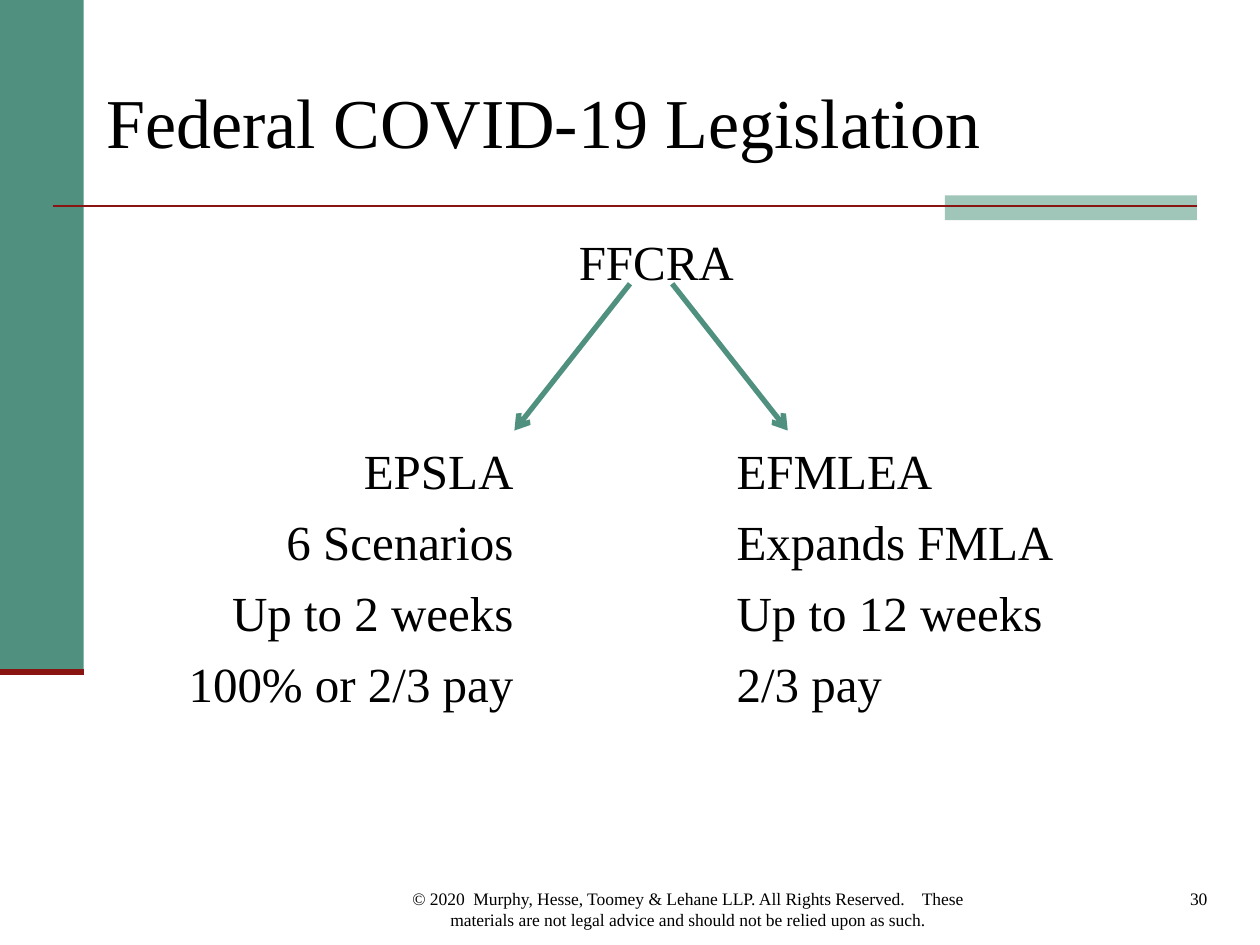
"""Build the Federal COVID-19 Legislation slide."""
from lxml.etree import SubElement
from pptx import Presentation
from pptx.dml.color import RGBColor
from pptx.enum.shapes import MSO_CONNECTOR, MSO_SHAPE
from pptx.enum.text import MSO_ANCHOR, PP_ALIGN
from pptx.oxml.ns import qn
from pptx.util import Cm, Pt

COLORS = {"green": "4F917E", "pale": "A0C6BA", "red": "891411", "text": "000000"}
FONT = "Times New Roman"


def add_text(slide, lines, box, size, align=PP_ALIGN.LEFT, anchor=MSO_ANCHOR.TOP,
             tabs=(), gaps=()):
    frame = slide.shapes.add_textbox(*map(Cm, box)).text_frame
    frame.word_wrap = True
    frame.vertical_anchor = anchor
    for index, line in enumerate(lines):
        paragraph = frame.add_paragraph() if index else frame.paragraphs[0]
        paragraph.alignment = PP_ALIGN.LEFT if "\t" in line else align
        if index:
            paragraph.space_before = Pt(gaps[index - 1])
        if "\t" in line:
            tab_list = SubElement(paragraph._p.get_or_add_pPr(), qn("a:tabLst"))
            for position, kind in tabs:
                SubElement(tab_list, qn("a:tab"), pos=str(Cm(position)), algn=kind)
        run = paragraph.add_run()
        run.text = line
        run.font.name = FONT
        run.font.size = Pt(size)
        run.font.color.rgb = RGBColor.from_string(COLORS["text"])


def add_line(slide, points, color, width, arrow=False):
    connector = slide.shapes.add_connector(MSO_CONNECTOR.STRAIGHT, *map(Cm, points))
    connector.line.color.rgb = RGBColor.from_string(COLORS[color])
    connector.line.width = Pt(width)
    if arrow:
        SubElement(connector.line._get_or_add_ln(), qn("a:tailEnd"), type="arrow")
    SubElement(connector._element.spPr, qn("a:effectLst"))


presentation = Presentation()
presentation.slide_width = Cm(25.4)
presentation.slide_height = Cm(19.05)
slide = presentation.slides.add_slide(presentation.slide_layouts[6])

for box, color in [((0, 0, 1.69, 13.55), "green"), ((19.05, 3.94, 5.08, 0.5), "pale")]:
    shape = slide.shapes.add_shape(MSO_SHAPE.RECTANGLE, *map(Cm, box))
    shape.shadow.inherit = False
    shape.fill.solid()
    shape.fill.fore_color.rgb = RGBColor.from_string(COLORS[color])
    shape.line.fill.background()

add_line(slide, (1.06, 4.15, 24.13, 4.15), "red", 1.5)
add_line(slide, (0, 13.55, 1.69, 13.55), "red", 3.5)

add_text(slide, ["Federal COVID-19 Legislation"], (1.9, 0.85, 22.86, 3.17), 40,
         anchor=MSO_ANCHOR.MIDDLE)

comparison = [
    ("EPSLA", "EFMLEA"),
    ("6 Scenarios", "Expands FMLA"),
    ("Up to 2 weeks", "Up to 12 weeks"),
    ("100% or 2/3 pay", "2/3 pay"),
]
body = ["FFCRA"] + [f"\t{left}\t{right}" for left, right in comparison]
add_text(slide, body, (1.9, 4.55, 22.66, 12.47), 28, align=PP_ALIGN.CENTER,
         tabs=[(8.2, "r"), (12.7, "l")], gaps=[85.5, 7, 7, 7])

add_text(slide, ["30"], (21.62, 17.78, 2.97, 0.64), 10, align=PP_ALIGN.RIGHT)
add_text(slide, ["© 2020  Murphy, Hesse, Toomey & Lehane LLP. All Rights Reserved.    "
                 "These materials are not legal advice and should not be relied upon as such."],
         (7.83, 17.78, 12.07, 0.85), 10, align=PP_ALIGN.CENTER)

for start, end in [(13.55, 15.88), (12.7, 10.37)]:
    add_line(slide, (start, 5.72, end, 8.68), "green", 3, arrow=True)

presentation.save("out.pptx")
